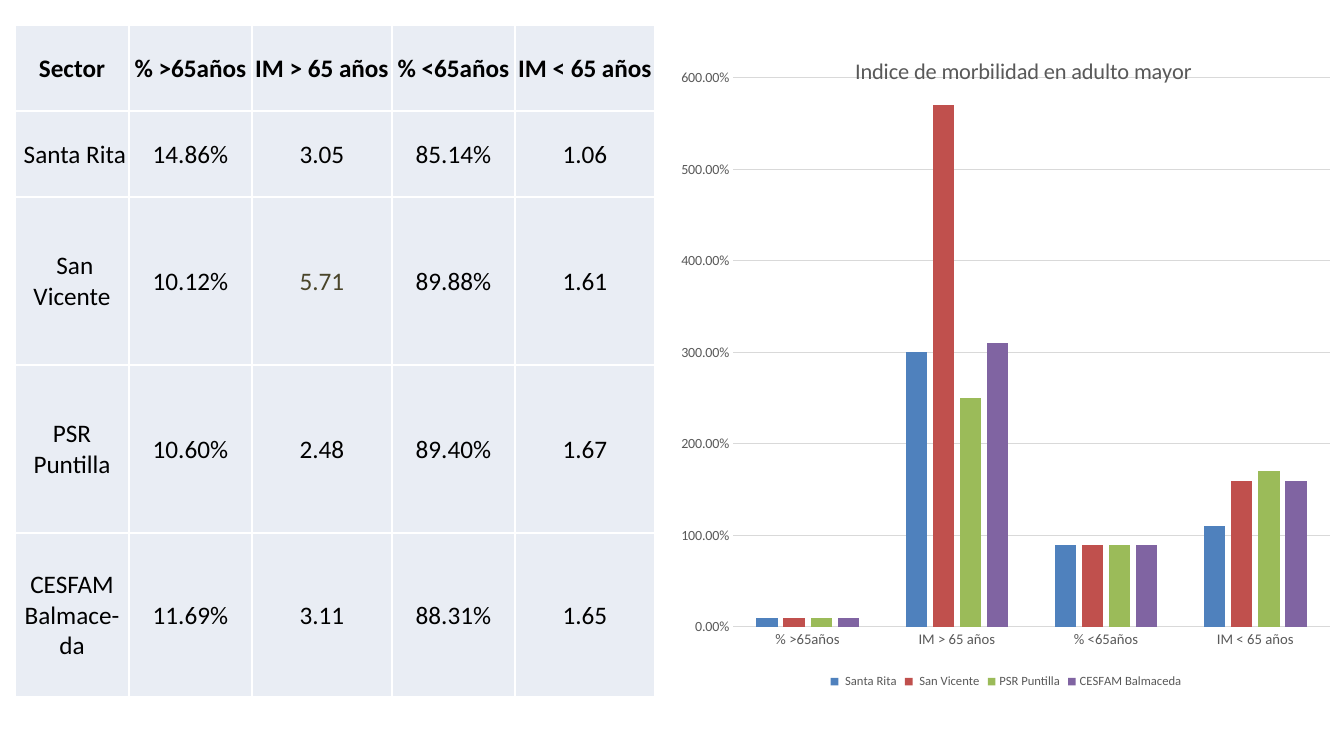
from dataclasses import dataclass

from lxml import etree
from pptx import Presentation, util as u
from pptx.chart.data import CategoryChartData
from pptx.dml.color import RGBColor
from pptx.enum import chart as ch, text
from pptx.oxml import parse_xml
from pptx.oxml.ns import nsdecls, qn


@dataclass(frozen=True)
class Theme:
    font: str = "Calibri"
    ink: str = "000000"
    accent: str = "4A452A"
    muted: str = "595959"
    rule: str = "D9D9D9"
    cell: str = "E9EDF4"
    border: str = "FFFFFF"
    series: tuple = ("4F81BD", "C0504D", "9BBB59", "8064A2")
    table_pt: float = 18
    title_pt: float = 16
    category_pt: float = 10.5
    axis_pt: float = 10
    legend_pt: float = 9


T = Theme()

HEADS = ["Sector", "% >65años", "IM > 65 años", "% <65años", "IM < 65 años"]
ROWS = [
    [" Santa Rita", "14.86%", "3.05", "85.14%", "1.06"],
    [" San Vicente", "10.12%", "5.71", "89.88%", "1.61"],
    ["PSR Puntilla", "10.60%", "2.48", "89.40%", "1.67"],
    ["CESFAM Balmace-da", "11.69%", "3.11", "88.31%", "1.65"],
]
COL_W = [114, 123, 140, 123, 140]
ROW_H = [86, 86, 168, 168, 164]


def px(n):
    return u.Emu(round(n * 914400 / 100.8))


def style(font, size, color=T.ink, bold=False):
    font.name, font.size, font.bold = T.font, u.Pt(size), bold
    font.color.rgb = RGBColor.from_string(color)


def write(tf, words, align=None, **fmt):
    p = tf.paragraphs[0]
    p.alignment = align
    r = p.add_run()
    r.text = words
    style(r.font, **fmt)


def value(words):
    number = float(words.rstrip("%"))
    return round(number / 100 if words.endswith("%") else number, 1)


def set_borders(cell):
    tc_pr = cell._tc.get_or_add_tcPr()
    for side in "LRTB":
        tc_pr.append(parse_xml(
            f'<a:ln{side} {nsdecls("a")} w="12700"><a:solidFill>'
            f'<a:srgbClr val="{T.border}"/></a:solidFill></a:ln{side}>'))


def set_layout(element, index, **fractions):
    """Place a chart part at fractions of the chart area."""
    for old in element.findall(qn("c:layout")):
        element.remove(old)
    layout = etree.Element(qn("c:layout"))
    manual = etree.SubElement(layout, qn("c:manualLayout"))
    if "w" in fractions:
        etree.SubElement(manual, qn("c:layoutTarget")).set("val", "inner")
    for axis in "xy":
        etree.SubElement(manual, qn(f"c:{axis}Mode")).set("val", "edge")
    for name, fraction in fractions.items():
        etree.SubElement(manual, qn(f"c:{name}")).set("val", str(round(fraction, 4)))
    element.insert(index, layout)


def morbidity_table(s, x, y):
    frame = s.shapes.add_table(len(ROW_H), len(COL_W), px(x), px(y),
                               px(sum(COL_W)), px(sum(ROW_H)))
    table = frame.table
    table.first_row = table.horz_banding = False
    for col, w in zip(table.columns, COL_W):
        col.width = px(w)
    for row, h in zip(table.rows, ROW_H):
        row.height = px(h)
    for i, line in enumerate([HEADS] + ROWS):
        for j, words in enumerate(line):
            cell = table.cell(i, j)
            cell.margin_left = cell.margin_right = cell.margin_top = px(1)
            cell.margin_bottom = 0
            cell.vertical_anchor = text.MSO_ANCHOR.MIDDLE
            set_borders(cell)
            cell.fill.solid()
            cell.fill.fore_color.rgb = RGBColor.from_string(T.cell)
            write(cell.text_frame, words, text.PP_ALIGN.CENTER, size=T.table_pt,
                  color=T.accent if words == "5.71" else T.ink, bold=i == 0)


def morbidity_chart(s, x, y, w, h):
    data = CategoryChartData(number_format="0.00%")
    data.categories = HEADS[1:]
    for name, *cells in ROWS:
        data.add_series(name.replace("-", ""), [value(c) for c in cells])
    chart = s.shapes.add_chart(ch.XL_CHART_TYPE.COLUMN_CLUSTERED,
                               px(x), px(y), px(w), px(h), data).chart
    style(chart.font, T.axis_pt)

    # Title over the top of the plot
    title = chart.chart_title
    write(title.text_frame, "Indice de morbilidad en adulto mayor",
          size=T.title_pt, color=T.muted)
    title.include_in_layout = True
    set_layout(title._element, 1, x=183 / w, y=52 / h)
    overlay = title._element.find(qn("c:overlay"))
    if overlay is None:
        overlay = etree.Element(qn("c:overlay"))
        title._element.find(qn("c:layout")).addnext(overlay)
    overlay.set("val", "1")

    # Columns
    plot = chart.plots[0]
    plot.gap_width, plot.overlap, plot.vary_by_categories = 219, -27, False
    for series, color in zip(plot.series, T.series):
        series.format.fill.solid()
        series.format.fill.fore_color.rgb = RGBColor.from_string(color)
    set_layout(chart._chartSpace.chart.plotArea, 0,
               x=65 / w, y=78 / h, w=597 / w, h=549 / h)

    # Axes
    cat, val = chart.category_axis, chart.value_axis
    for axis, size in ((cat, T.category_pt), (val, T.axis_pt)):
        axis.major_tick_mark = axis.minor_tick_mark = ch.XL_TICK_MARK.NONE
        style(axis.tick_labels.font, size, T.muted)
    val.minimum_scale, val.maximum_scale, val.major_unit = 0, 6, 1
    val.tick_labels.number_format = "0.00%"
    val.tick_labels.number_format_is_linked = False
    val.format.line.fill.background()
    for line in (cat.format.line, val.major_gridlines.format.line):
        line.color.rgb = RGBColor.from_string(T.rule)
        line.width = u.Pt(0.75)

    # Legend
    chart.has_legend = True
    chart.legend.position = ch.XL_LEGEND_POSITION.BOTTOM
    chart.legend.include_in_layout = False
    style(chart.legend.font, T.legend_pt, T.muted)


def main():
    prs = Presentation()
    prs.slide_width, prs.slide_height = px(1344), px(756)
    s = prs.slides.add_slide(prs.slide_layouts[6])
    morbidity_chart(s, 668, 0, 676, 693)
    morbidity_table(s, 15, 25)
    prs.save("out.pptx")


if __name__ == "__main__":
    main()
